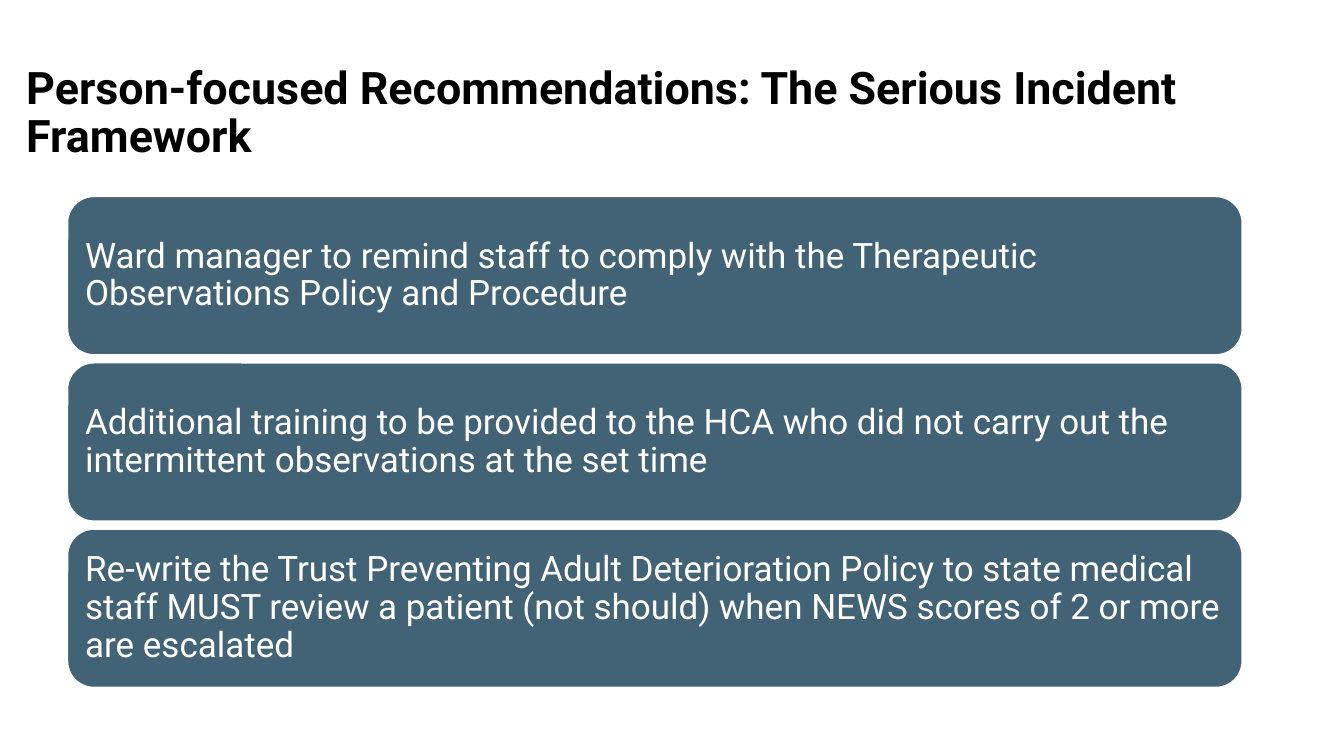
"""Build the slide of person-focused recommendations as a title over three equal cards."""
from dataclasses import dataclass

from pptx import Presentation
from pptx import util as u
from pptx.dml.color import RGBColor
from pptx.enum import shapes, text

PX = 9144


@dataclass(frozen=True)
class Theme:
    font: str = "Roboto"
    ink: str = "000000"
    card: str = "426276"
    light: str = "FFFFFF"
    title_size: int = 32
    card_size: int = 25


def write(tf, words, anchor, size, color, bold, margins):
    for name, value in margins.items():
        setattr(tf, f"margin_{name}", value * PX)
    for name, value in {"word_wrap": True, "auto_size": text.MSO_AUTO_SIZE.NONE,
                        "vertical_anchor": anchor}.items():
        setattr(tf, name, value)
    p = tf.paragraphs[0]
    p.alignment = text.PP_ALIGN.LEFT
    p.line_spacing = 0.9
    r = p.add_run()
    r.text = words
    for name, value in {"name": theme.font, "size": u.Pt(size), "bold": bold}.items():
        setattr(r.font, name, value)
    r.font.color.rgb = RGBColor.from_string(color)


theme = Theme()
prs = Presentation()
prs.slide_width, prs.slide_height = 1333 * PX, 750 * PX
s = prs.slides.add_slide(prs.slide_layouts[5])

title = s.shapes.title
for name, value in {"left": 16, "top": 60, "width": 1317, "height": 124}.items():
    setattr(title, name, value * PX)
write(title.text_frame, "Person-focused Recommendations: The Serious Incident Framework",
      text.MSO_ANCHOR.TOP, theme.title_size, theme.ink, True,
      {"left": 10, "right": 10, "top": 5, "bottom": 5})

recommendations = [
    "Ward manager to remind staff to comply with the Therapeutic Observations Policy and Procedure",
    "Additional training to be provided to the HCA who did not carry out the intermittent "
    "observations at the set time",
    "Re-write the Trust Preventing Adult Deterioration Policy to state medical staff MUST review "
    "a patient (not should) when NEWS scores of 2 or more are escalated",
]
left, top, width, height, gap = 67, 195, 1165, 157, 8
for i, words in enumerate(recommendations):
    sp = s.shapes.add_shape(shapes.MSO_SHAPE.ROUNDED_RECTANGLE, left * PX,
                            (top + i * (height + gap)) * PX, width * PX, height * PX)
    sp.shadow.inherit = False
    sp.fill.solid()
    sp.fill.fore_color.rgb = RGBColor.from_string(theme.card)
    sp.line.color.rgb = RGBColor.from_string(theme.light)
    sp.line.width = u.Pt(1)
    write(sp.text_frame, words, text.MSO_ANCHOR.MIDDLE, theme.card_size, theme.light, False,
          dict.fromkeys(("left", "right", "top", "bottom"), 10))

prs.save("out.pptx")
